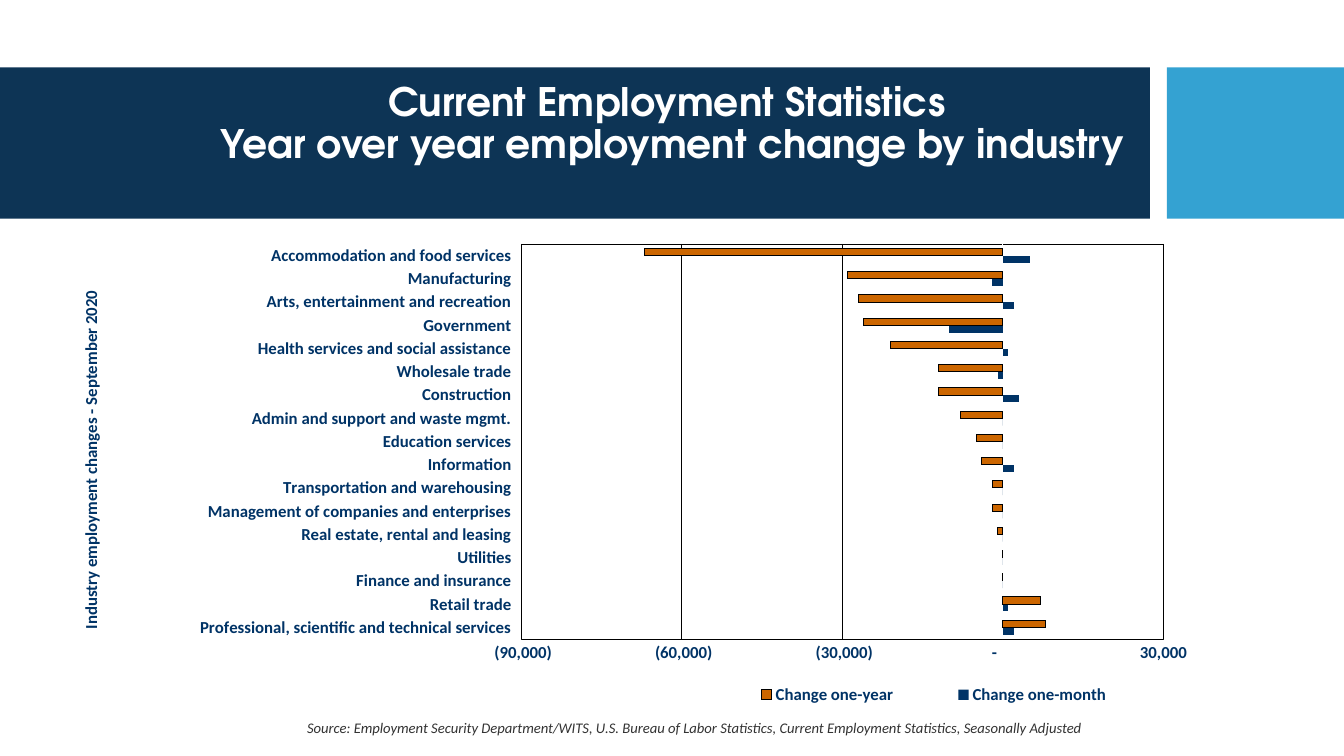
from lxml import etree
from pptx import Presentation
from pptx.chart.data import CategoryChartData
from pptx.dml.color import RGBColor
from pptx.enum.chart import XL_CHART_TYPE, XL_LEGEND_POSITION, XL_TICK_LABEL_POSITION, XL_TICK_MARK
from pptx.enum.shapes import MSO_SHAPE
from pptx.enum.text import MSO_ANCHOR, PP_ALIGN
from pptx.oxml import parse_xml
from pptx.oxml.ns import nsdecls, qn
from pptx.util import Cm, Pt

# Content
TITLE = "Current Employment Statistics \vYear over year employment change by industry"
AXIS_TITLE = "Industry employment changes - September 2020"
SOURCE = ("Source: Employment Security Department/WITS, U.S. Bureau of Labor Statistics, "
          "Current Employment Statistics, Seasonally Adjusted")
SERIES = [("Change one-month", "navy", None), ("Change one-year", "orange", "black")]
# Industry, one-month change, one-year change (bottom to top)
INDUSTRIES = [
    ("Professional, scientific and technical services", 2000, 8000),
    ("Retail trade", 1000, 7000),
    ("Finance and insurance", 0, 0),
    ("Utilities", 0, 0),
    ("Real estate, rental and leasing", 0, -1000),
    ("Management of companies and enterprises", 0, -2000),
    ("Transportation and warehousing", 0, -2000),
    ("Information", 2000, -4000),
    ("Education services", 0, -5000),
    ("Admin and support and waste mgmt.", 0, -8000),
    ("Construction", 3000, -12000),
    ("Wholesale trade", -1000, -12000),
    ("Health services and social assistance", 1000, -21000),
    ("Government", -10000, -26000),
    ("Arts, entertainment and recreation", 2000, -27000),
    ("Manufacturing", -2000, -29000),
    ("Accommodation and food services", 5000, -67000),
]
COLORS = {"band": "0D3455", "accent": "34A2D2", "navy": "003366", "orange": "CC6600",
          "black": "000000", "white": "FFFFFF", "grey": "333333"}
NUMBER_FORMAT = '_(* #,##0_);_(* \\(#,##0\\);_(* "-"??_);_('
# Left and width of each header band, in cm
BANDS = [("band", 0, 28.98), ("accent", 29.41, 4.46)]


def rgb(name):
    return RGBColor.from_string(COLORS[name])


def set_font(font, size, color, face="Calibri", bold=False, italic=False):
    font.name, font.size, font.bold, font.italic = face, Pt(size), bold, italic
    font.color.rgb = rgb(color)


def set_line(line, color, width):
    line.color.rgb = rgb(color)
    line.width = Pt(width)


def place(part, inner=False, **fractions):
    """Fix the position of a chart part as fractions of the chart."""
    layout = part.find(qn("c:layout"))
    if layout is None:
        layout = parse_xml(f"<c:layout {nsdecls('c')}/>")
        overlay = part.find(qn("c:overlay"))
        if overlay is None:
            part.insert(0, layout)
        else:
            overlay.addprevious(layout)
    manual = etree.SubElement(layout, qn("c:manualLayout"))
    settings = [("layoutTarget", "inner")] if inner else []
    settings += [("xMode", "edge"), ("yMode", "edge"), *fractions.items()]
    for tag, value in settings:
        etree.SubElement(manual, qn(f"c:{tag}")).set("val", str(value))


prs = Presentation()
prs.slide_width, prs.slide_height = Cm(33.87), Cm(19.05)
slide = prs.slides.add_slide(prs.slide_layouts[5])

# Title over the header bands
title = slide.shapes.title
title.left, title.top, title.width, title.height = Cm(3.58), Cm(1.6), Cm(26.72), Cm(3.1)
title.text_frame.text = TITLE
title.text_frame.word_wrap = True
title.text_frame.vertical_anchor = MSO_ANCHOR.MIDDLE
heading = title.text_frame.paragraphs[0]
heading.alignment = PP_ALIGN.CENTER
heading.line_spacing = 0.9
set_font(heading.font, 28, "white", "TeX Gyre Adventor", bold=True)

for color, left, width in BANDS:
    band = slide.shapes.add_shape(MSO_SHAPE.RECTANGLE, Cm(left), Cm(1.7), Cm(width), Cm(3.81))
    band.shadow.inherit = False
    band.fill.solid()
    band.fill.fore_color.rgb = rgb(color)
    band.line.fill.background()
    title._element.addprevious(band._element)

# Chart
employment = CategoryChartData(number_format="#,##0")
employment.categories = [row[0] for row in INDUSTRIES]
for column, (name, _, _) in enumerate(SERIES, start=1):
    employment.add_series(name, [row[column] for row in INDUSTRIES])
chart = slide.shapes.add_chart(XL_CHART_TYPE.BAR_CLUSTERED, Cm(1.63), Cm(5.92),
                               Cm(29.21), Cm(12.07), employment).chart
chart.has_title = False
set_font(chart.font, 12, "navy", bold=True)

bars = chart.plots[0]
bars.gap_width, bars.overlap, bars.vary_by_categories = 122, 0, False
for series, (_, fill, outline) in zip(bars.series, SERIES):
    series.invert_if_negative = False
    series.format.fill.solid()
    series.format.fill.fore_color.rgb = rgb(fill)
    if outline:
        set_line(series.format.line, outline, 0)
    else:
        series.format.line.fill.background()

# Axes
industries, change = chart.category_axis, chart.value_axis
for axis in (industries, change):
    axis.major_tick_mark = axis.minor_tick_mark = XL_TICK_MARK.NONE
    set_font(axis.tick_labels.font, 12, "navy", bold=True)
industries.tick_label_position = XL_TICK_LABEL_POSITION.LOW
set_line(industries.format.line, "white", 0.75)
change.minimum_scale, change.maximum_scale, change.major_unit = -90000, 30000, 30000
change.format.line.fill.background()
set_line(change.major_gridlines.format.line, "black", 0.75)
change.tick_labels.number_format = NUMBER_FORMAT
change.tick_labels.number_format_is_linked = False

axis_title = industries.axis_title
axis_title.text_frame.text = AXIS_TITLE
set_font(axis_title.text_frame.paragraphs[0].font, 12, "navy", bold=True)
turned = axis_title.text_frame._txBody.find(qn("a:bodyPr"))
turned.set("rot", "-5400000")
turned.set("vert", "horz")
place(axis_title._element, x=0.01, y=0.11)

# Framed plot area and legend
plot_area = chart._chartSpace.chart.plotArea
place(plot_area, inner=True, x=0.394, y=0.019, w=0.554, h=0.825)
plot_area.append(parse_xml(
    f'<c:spPr {nsdecls("c", "a")}><a:noFill/><a:ln w="9525"><a:solidFill>'
    f'<a:srgbClr val="{COLORS["black"]}"/></a:solidFill></a:ln></c:spPr>'))
chart.has_legend = True
chart.legend.position = XL_LEGEND_POSITION.BOTTOM
chart.legend.include_in_layout = False
set_font(chart.legend.font, 12, "navy", bold=True)
place(chart.legend._element, x=0.55, y=0.93, w=0.4, h=0.06)

# Source line
source = slide.shapes.add_textbox(Cm(7.49), Cm(17.98), Cm(21.74), Cm(0.71)).text_frame
source.word_wrap = True
source.text = SOURCE
set_font(source.paragraphs[0].font, 10.5, "grey", italic=True)

prs.save("out.pptx")
